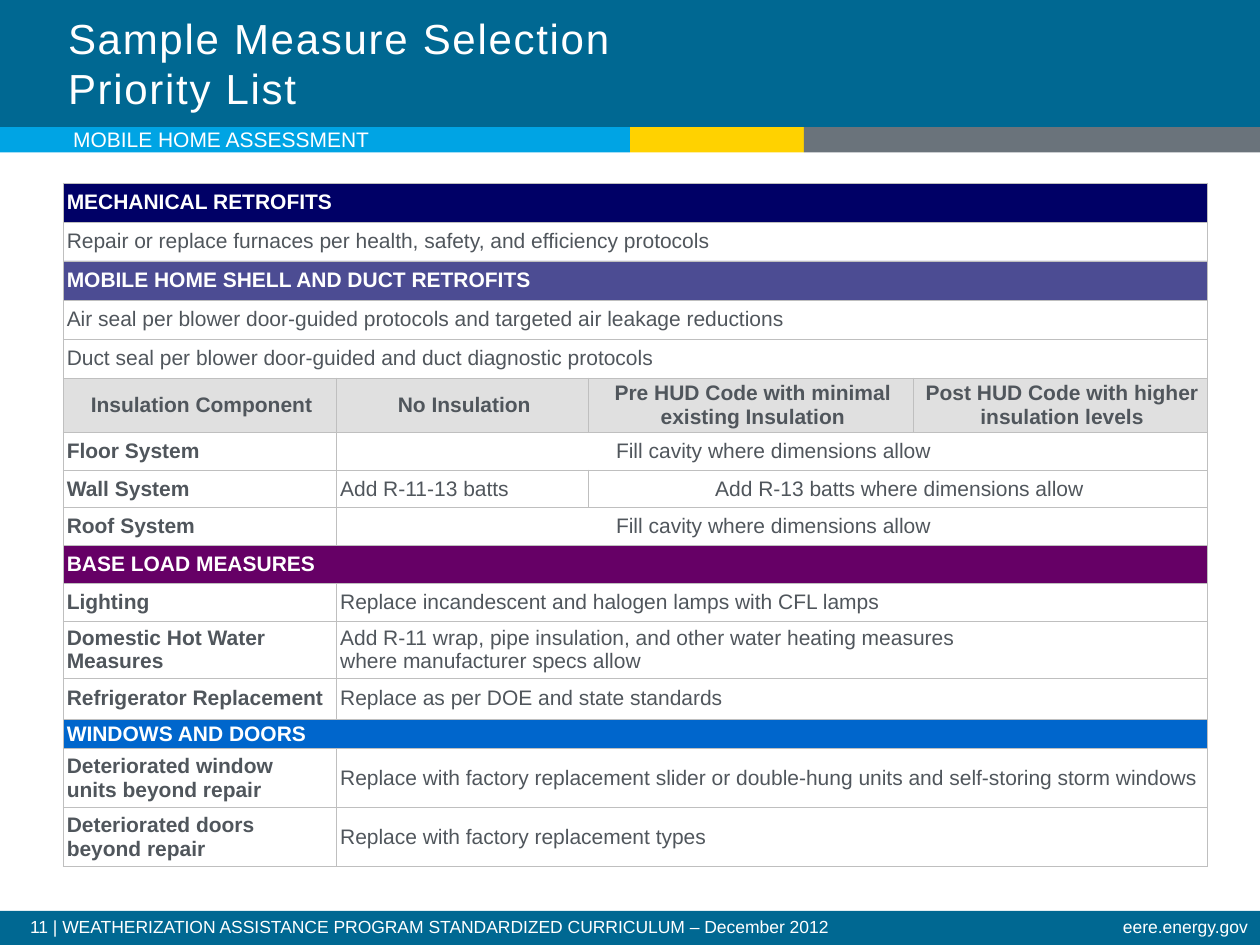
from lxml import etree
from pptx import Presentation
from pptx.dml.color import RGBColor
from pptx.enum.shapes import MSO_SHAPE
from pptx.enum.text import MSO_ANCHOR, PP_ALIGN
from pptx.oxml.ns import qn
from pptx.util import Inches, Pt

RECTANGLE = MSO_SHAPE.RECTANGLE
TOP, MIDDLE = MSO_ANCHOR.TOP, MSO_ANCHOR.MIDDLE
LEFT, CENTER, RIGHT = PP_ALIGN.LEFT, PP_ALIGN.CENTER, PP_ALIGN.RIGHT

TEAL = RGBColor(0x00, 0x68, 0x92)
SKY = RGBColor(0x00, 0xA4, 0xE4)
YELLOW = RGBColor(0xFF, 0xD2, 0x00)
SLATE = RGBColor(0x6A, 0x73, 0x7B)
WHITE = RGBColor(0xFF, 0xFF, 0xFF)
BODY = RGBColor(0x50, 0x56, 0x5C)
NAVY = RGBColor(0x00, 0x00, 0x66)
PURPLE = RGBColor(0x66, 0x00, 0x66)
BLUE = RGBColor(0x00, 0x66, 0xCC)
LIGHT_GRAY = RGBColor(0xE0, 0xE0, 0xE0)
BORDER = RGBColor(0xBF, 0xBF, 0xBF)

FONT = "Arial"
DEFAULT_INSETS = (0.1, 0.05, 0.1, 0.05)
CELL_INDENT = 0.03
COLUMN_WIDTHS = (2.17, 2, 2.58, 2.33)

# Each row: kind, height, cell texts; a section also has its fill and opacity
MEASURES = [
    ("section", 0.31, ["MECHANICAL RETROFITS"], NAVY, 100),
    ("note", 0.31, ["Repair or replace furnaces per health, safety, and efficiency protocols"]),
    ("section", 0.31, ["MOBILE HOME SHELL AND DUCT RETROFITS"], NAVY, 70),
    ("note", 0.31, ["Air seal per blower door-guided protocols and targeted air leakage reductions"]),
    ("note", 0.31, ["Duct seal per blower door-guided and duct diagnostic protocols"]),
    ("heading", 0.43, ["Insulation Component", "No Insulation",
                       "Pre HUD Code with minimal existing Insulation",
                       "Post HUD Code with higher insulation levels"]),
    ("insulation", 0.3, ["Floor System", "Fill cavity where dimensions allow"]),
    ("insulation", 0.3, ["Wall System", "Add R-11-13 batts",
                         "Add R-13 batts where dimensions allow"]),
    ("insulation", 0.3, ["Roof System", "Fill cavity where dimensions allow"]),
    ("section", 0.3, ["BASE LOAD MEASURES"], PURPLE, 100),
    ("measure", 0.3, ["Lighting", "Replace incandescent and halogen lamps with CFL lamps"]),
    ("measure", 0.45, ["Domestic Hot Water Measures",
                       "Add R-11 wrap, pipe insulation, and other water heating measures\n"
                       "where manufacturer specs allow"]),
    ("measure", 0.33, ["Refrigerator Replacement", "Replace as per DOE and state standards"]),
    ("section", 0.23, ["WINDOWS AND DOORS"], BLUE, 100),
    ("measure", 0.47, ["Deteriorated window\nunits beyond repair",
                       "Replace with factory replacement slider or double-hung units "
                       "and self-storing storm windows"]),
    ("measure", 0.47, ["Deteriorated doors\nbeyond repair",
                       "Replace with factory replacement types"]),
]


def add_bar(slide, left, top, width, height, color):
    bar = slide.shapes.add_shape(
        RECTANGLE, Inches(left), Inches(top), Inches(width), Inches(height))
    bar.shadow.inherit = False
    bar.fill.solid()
    bar.fill.fore_color.rgb = color
    bar.line.fill.background()


def write_paragraph(paragraph, text, size, color, bold=False, align=LEFT, indent=0):
    paragraph.text = text
    paragraph.alignment = align
    paragraph._p.get_or_add_pPr().set("marL", str(Inches(indent)))
    font = paragraph.font
    font.name, font.size, font.bold = FONT, Pt(size), bold
    font.color.rgb = color


def add_text(slide, box, text, size, anchor=MIDDLE, insets=(0, 0, 0, 0), **style):
    shape = slide.shapes.add_textbox(*(Inches(length) for length in box))
    frame = shape.text_frame
    frame.word_wrap = True
    frame.vertical_anchor = anchor
    (frame.margin_left, frame.margin_top,
     frame.margin_right, frame.margin_bottom) = (Inches(inset) for inset in insets)
    paragraph = frame.paragraphs[0]
    write_paragraph(paragraph, text, size, WHITE, **style)
    return paragraph


def set_borders(cell):
    properties = cell._tc.get_or_add_tcPr()
    for index, side in enumerate(("lnL", "lnR", "lnT", "lnB")):
        line = etree.Element(qn(f"a:{side}"), w=str(Pt(0.25)))
        fill = etree.SubElement(line, qn("a:solidFill"))
        etree.SubElement(fill, qn("a:srgbClr"), val=str(BORDER))
        properties.insert(index, line)


def fill_cell(cell, color, opacity=100):
    cell.fill.solid()
    cell.fill.fore_color.rgb = color
    if opacity < 100:
        color_element = cell._tc.tcPr.find(f"{qn('a:solidFill')}/{qn('a:srgbClr')}")
        etree.SubElement(color_element, qn("a:alpha"), val=str(opacity * 1000))


def write_row(table, row, kind, height, texts, color=None, opacity=100):
    table.rows[row].height = Inches(height)
    last_column = len(COLUMN_WIDTHS) - 1
    for column in range(last_column + 1):
        cell = table.cell(row, column)
        cell.margin_left = cell.margin_right = cell.margin_top = cell.margin_bottom = 0
        cell.vertical_anchor = MIDDLE
        if kind == "section":
            fill_cell(cell, color, opacity)
        elif kind == "heading":
            fill_cell(cell, LIGHT_GRAY)
        else:
            cell.fill.background()
        set_borders(cell)

    # The last text of a row spans the columns that remain
    last_text = len(texts) - 1
    if last_text < last_column:
        table.cell(row, last_text).merge(table.cell(row, last_column))
    for column, text in enumerate(texts):
        bold = kind in ("section", "heading") or (kind != "note" and column == 0)
        centered = kind == "heading" or (kind == "insulation" and column == last_text)
        write_paragraph(table.cell(row, column).text_frame.paragraphs[0], text, 12,
                        WHITE if kind == "section" else BODY, bold,
                        CENTER if centered else LEFT, CELL_INDENT)


def add_measure_table(slide):
    table = slide.shapes.add_table(
        len(MEASURES), len(COLUMN_WIDTHS),
        Inches(0.5), Inches(1.45), Inches(9.08), Inches(5.47)).table
    table.first_row = table.horz_banding = False
    for column, width in zip(table.columns, COLUMN_WIDTHS):
        column.width = Inches(width)
    for row, measure in enumerate(MEASURES):
        write_row(table, row, *measure)


def main():
    presentation = Presentation()
    presentation.slide_width, presentation.slide_height = Inches(10), Inches(7.5)
    slide = presentation.slides.add_slide(presentation.slide_layouts[6])

    # Header, footer and color strip
    add_bar(slide, 0, 0, 10, 1.01, TEAL)
    add_bar(slide, 0, 7.23, 10, 0.27, TEAL)
    left = 0
    for width, color in ((5, SKY), (1.38, YELLOW), (3.62, SLATE)):
        add_bar(slide, left, 1.01, width, 0.2, color)
        left += width

    # Footer text
    for box, text, align in (
        ((0.14, 7.24, 7.97, 0.26),
         "11 | WEATHERIZATION ASSISTANCE PROGRAM STANDARDIZED CURRICULUM – December 2012", LEFT),
        ((5.99, 7.24, 4.01, 0.26), "eere.energy.gov", RIGHT),
    ):
        footer = add_text(slide, box, text, 10, TOP, DEFAULT_INSETS, align=align)
        footer.line_spacing = 0.9

    # Title with letter spacing, and subtitle
    title = add_text(slide, (0.5, 0, 5.58, 1), "Sample Measure Selection Priority List",
                     24, insets=(0, 0, 0.13, 0), indent=0.04)
    title.runs[0]._r.get_or_add_rPr().set("spc", "100")
    add_measure_table(slide)
    add_text(slide, (0.58, 0.98, 6.92, 0.25), "MOBILE HOME ASSESSMENT", 12)

    presentation.save("out.pptx")


if __name__ == "__main__":
    main()
